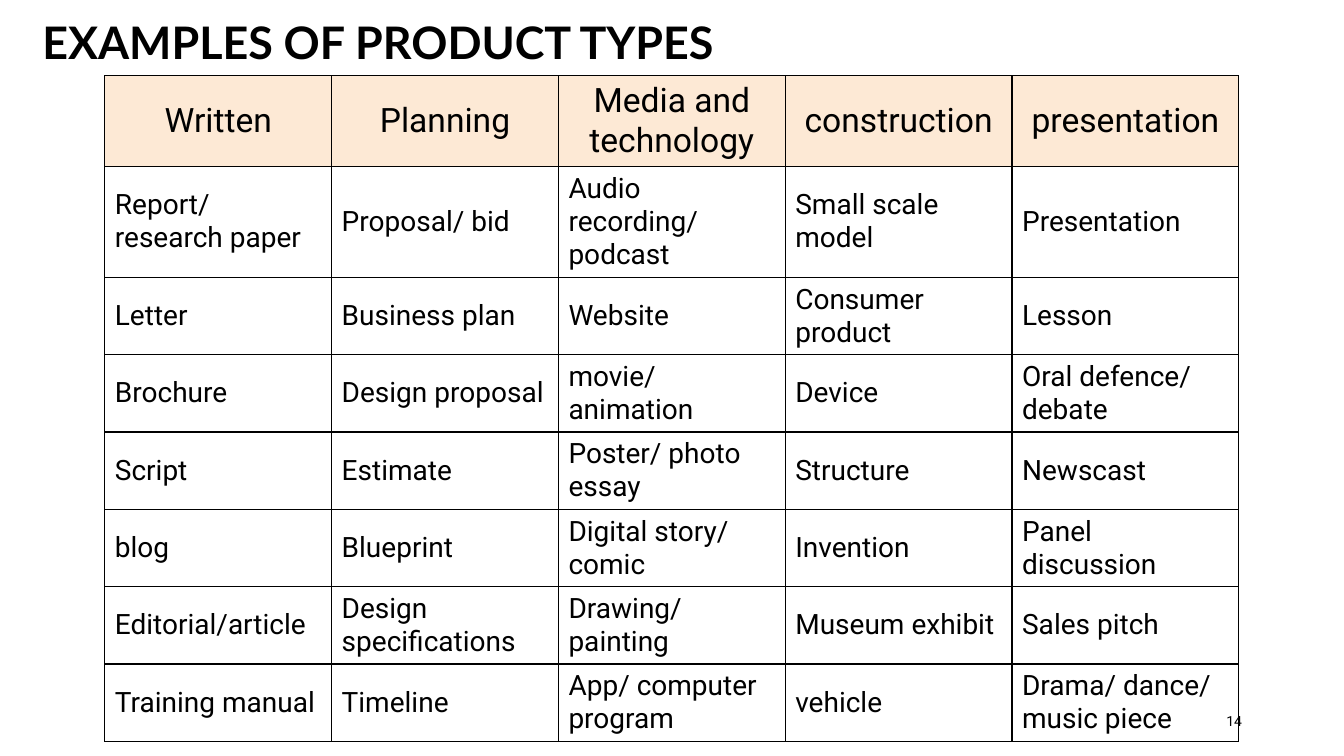
from lxml import etree
from pptx import Presentation
from pptx.dml.color import RGBColor
from pptx.enum import text as t
from pptx.oxml import ns
from pptx.util import Pt

INK = "000000"
PEACH = "FDE9D5"
ROWS = [
    ["Written", "Planning", "Media and technology", "construction", "presentation"],
    ["Report/ research paper", "Proposal/ bid", "Audio recording/ podcast",
     "Small scale model", "Presentation"],
    ["Letter", "Business plan", "Website", "Consumer product", "Lesson"],
    ["Brochure", "Design proposal", "movie/ animation", "Device", "Oral defence/ debate"],
    ["Script", "Estimate", "Poster/ photo essay", "Structure", "Newscast"],
    ["blog", "Blueprint", "Digital story/ comic", "Invention", "Panel discussion"],
    ["Editorial/article", "Design specifications", "Drawing/ painting",
     "Museum exhibit", "Sales pitch"],
    ["Training manual", "Timeline", "App/ computer program", "vehicle",
     "Drama/ dance/ music piece"],
]


def color(code):
    return RGBColor.from_string(code)


def write(frame, words, size=20, font="Roboto", bold=False, align="LEFT", space=1.0):
    frame.word_wrap = True
    frame.vertical_anchor = t.MSO_ANCHOR.MIDDLE
    para = frame.paragraphs[0]
    para.alignment = getattr(t.PP_ALIGN, align)
    para.line_spacing = space
    run = para.add_run()
    run.text = words
    run.font.size = Pt(size)
    run.font.name = font
    run.font.bold = bold
    run.font.color.rgb = color(INK)


def place(shape, left, top, width, height):
    shape.left, shape.top = Pt(left), Pt(top)
    shape.width, shape.height = Pt(width), Pt(height)


def border(cell):
    props = cell._tc.get_or_add_tcPr()
    for pos, side in enumerate(("lnL", "lnR", "lnT", "lnB")):
        line = etree.Element(ns.qn("a:" + side), w=str(Pt(1)))
        fill = etree.SubElement(line, ns.qn("a:solidFill"))
        etree.SubElement(fill, ns.qn("a:srgbClr"), val=INK)
        props.insert(pos, line)


def add_title(slide, words):
    title = slide.shapes.title
    place(title, 23.04, 10.8, 826.56, 43.2)
    write(title.text_frame, words, size=32, font="Lato", bold=True, space=0.9)
    title.text_frame.auto_size = t.MSO_AUTO_SIZE.NONE


def add_number(slide, words):
    box = slide.shapes.add_textbox(Pt(678.24), Pt(500.4), Pt(216), Pt(28.8))
    write(box.text_frame, words, size=10, align="RIGHT")


def add_grid(slide, rows):
    wide, high = 162, 51.84
    count = len(rows[0])
    table = slide.shapes.add_table(len(rows), count, Pt(74.88), Pt(54),
                                   Pt(wide * count), Pt(high * len(rows))).table
    table.first_row = table.horz_banding = False
    for y, row in enumerate(rows):
        for x, words in enumerate(row):
            cell = table.cell(y, x)
            cell.vertical_anchor = t.MSO_ANCHOR.MIDDLE
            if y == 0:
                cell.fill.solid()
                cell.fill.fore_color.rgb = color(PEACH)
                write(cell.text_frame, words, size=24, align="CENTER")
            else:
                cell.fill.background()
                write(cell.text_frame, words)
            border(cell)


def main():
    deck = Presentation()
    deck.slide_width, deck.slide_height = Pt(960), Pt(540)
    slide = deck.slides.add_slide(deck.slide_layouts[5])
    add_title(slide, "EXAMPLES OF PRODUCT TYPES")
    add_number(slide, "14")
    add_grid(slide, ROWS)
    deck.save("out.pptx")


if __name__ == "__main__":
    main()
